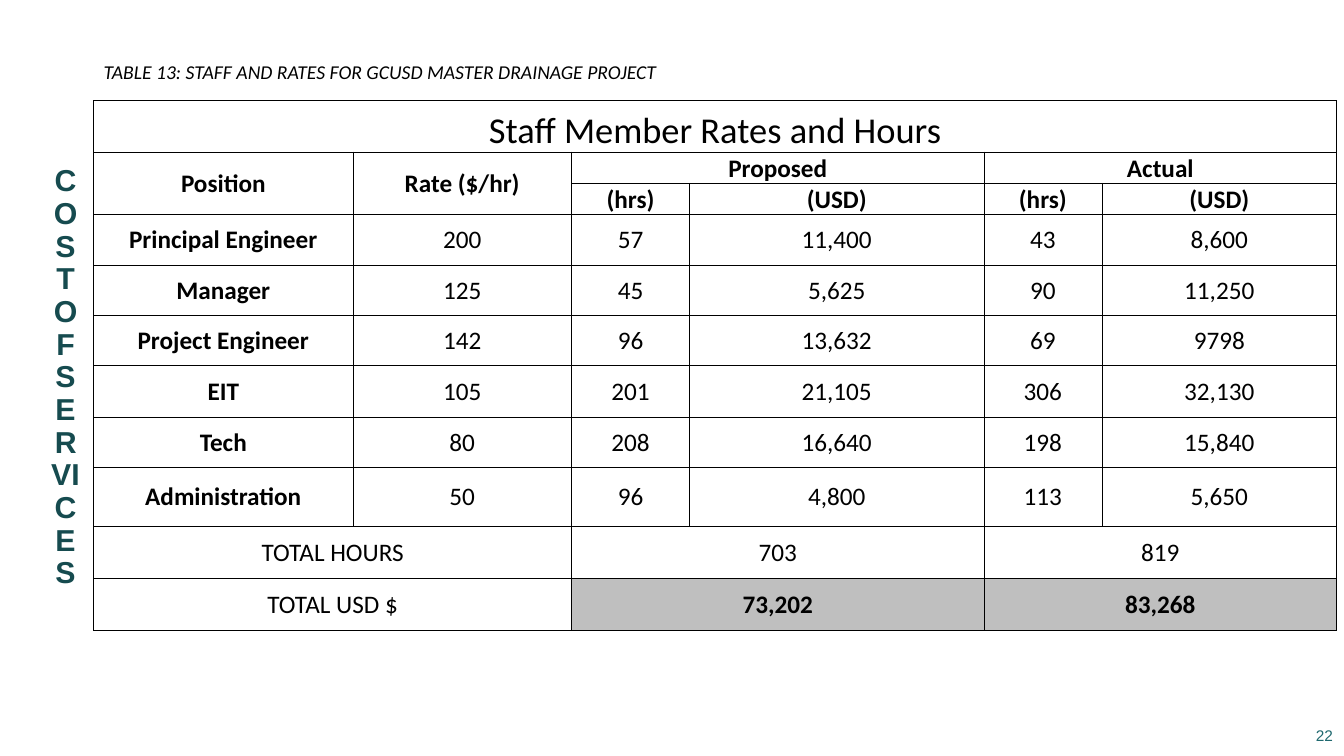
from dataclasses import dataclass

from lxml import etree
from pptx import Presentation
from pptx.dml.color import RGBColor
from pptx.enum.text import MSO_ANCHOR, MSO_AUTO_SIZE, PP_ALIGN
from pptx.oxml.ns import qn
from pptx.util import Inches, Pt

LEFT, CENTER, RIGHT = PP_ALIGN.LEFT, PP_ALIGN.CENTER, PP_ALIGN.RIGHT
TOP, MIDDLE, BOTTOM = MSO_ANCHOR.TOP, MSO_ANCHOR.MIDDLE, MSO_ANCHOR.BOTTOM
NO_AUTOFIT = MSO_AUTO_SIZE.NONE
TITLE_ONLY = 5


@dataclass(frozen=True)
class TextStyle:
    size: float
    color: str = "000000"
    font: str = "Calibri"
    bold: bool = False
    italic: bool = False
    align: PP_ALIGN = CENTER
    line_spacing: float = 1.0


@dataclass(frozen=True)
class Theme:
    title: TextStyle = TextStyle(21.6, "164B4F", "Arial", bold=True, line_spacing=0.9)
    page_number: TextStyle = TextStyle(11, "1F696F", "Arial", align=RIGHT)
    caption: TextStyle = TextStyle(14, italic=True, align=LEFT)
    heading: TextStyle = TextStyle(26, line_spacing=1.15)
    label: TextStyle = TextStyle(18, bold=True)
    value: TextStyle = TextStyle(18)
    highlight: str = "BFBFBF"
    border: str = "000000"
    border_points: float = 0.5


@dataclass(frozen=True)
class Box:
    left: float
    top: float
    width: float
    height: float

    def lengths(self) -> tuple:
        return tuple(Inches(n) for n in (self.left, self.top, self.width, self.height))


@dataclass(frozen=True)
class TableCell:
    row: int
    column: int
    text: str
    style: TextStyle
    rows: int = 1
    columns: int = 1
    fill: str = ""


THEME = Theme()
TITLE_BOX = Box(0.4, 0, 0.5, 7.5)
PAGE_NUMBER_BOX = Box(12.82, 7.1, 0.5, 0.4)
CAPTION_BOX = Box(0.93, 0.55, 9.59, 0.34)
TABLE_BOX = Box(0.93, 1, 12.32, 5.25)
COLUMN_WIDTHS = (2.57, 2.17, 1.17, 2.92, 1.17, 2.33)
ROW_HEIGHTS = (0.33, 0.24, 0.25, 0.5, 0.5, 0.5, 0.51, 0.5, 0.58, 0.52, 0.52)
FIRST_STAFF_ROW = 3
STAFF = (
    ("Principal Engineer", "200", "57", "11,400", "43", "8,600"),
    ("Manager", "125", "45", "5,625", "90", "11,250"),
    ("Project Engineer", "142", "96", "13,632", "69", "9798"),
    ("EIT", "105", "201", "21,105", "306", "32,130"),
    ("Tech", "80", "208", "16,640", "198", "15,840"),
    ("Administration", "50", "96", "4,800", "113", "5,650"),
)
TOTALS = (
    (("TOTAL HOURS", "703", "819"), THEME.value, ""),
    (("TOTAL USD $", "73,202", "83,268"), THEME.label, THEME.highlight),
)


def write_text(text_frame, text: str, style: TextStyle) -> None:
    paragraph = text_frame.paragraphs[0]
    paragraph.text = text
    paragraph.alignment = style.align
    paragraph.line_spacing = style.line_spacing
    font = paragraph.font
    font.name = style.font
    font.size = Pt(style.size)
    font.bold = style.bold
    font.italic = style.italic
    font.color.rgb = RGBColor.from_string(style.color)


def place_title(slide, text: str) -> None:
    title = slide.shapes.title
    title.left, title.top, title.width, title.height = TITLE_BOX.lengths()
    text_frame = title.text_frame
    text_frame.auto_size = NO_AUTOFIT
    text_frame.word_wrap = True
    text_frame.vertical_anchor = BOTTOM
    title.element.txBody.find(qn("a:bodyPr")).set("vert", "wordArtVert")
    write_text(text_frame, text, THEME.title)


def add_text(slide, box: Box, text: str, style: TextStyle, anchor: MSO_ANCHOR) -> None:
    text_frame = slide.shapes.add_textbox(*box.lengths()).text_frame
    text_frame.word_wrap = True
    text_frame.vertical_anchor = anchor
    write_text(text_frame, text, style)


def add_borders(cell) -> None:
    properties = cell._tc.get_or_add_tcPr()
    for index, side in enumerate(("a:lnL", "a:lnR", "a:lnT", "a:lnB")):
        line = etree.Element(qn(side), w=str(Pt(THEME.border_points)))
        fill = etree.SubElement(line, qn("a:solidFill"))
        etree.SubElement(fill, qn("a:srgbClr"), val=THEME.border)
        properties.insert(index, line)


def table_cells() -> list[TableCell]:
    label = THEME.label
    cells = [
        TableCell(0, 0, "Staff Member Rates and Hours", THEME.heading, columns=6),
        TableCell(1, 0, "Position", label, rows=2),
        TableCell(1, 1, "Rate ($/hr)", label, rows=2),
    ]
    for column, group in ((2, "Proposed"), (4, "Actual")):
        cells += [
            TableCell(1, column, group, label, columns=2),
            TableCell(2, column, "(hrs)", label),
            TableCell(2, column + 1, "(USD)", label),
        ]
    for row, member in enumerate(STAFF, FIRST_STAFF_ROW):
        for column, text in enumerate(member):
            cells.append(TableCell(row, column, text, THEME.value if column else label))
    for row, (texts, style, fill) in enumerate(TOTALS, FIRST_STAFF_ROW + len(STAFF)):
        for index, text in enumerate(texts):
            cells.append(TableCell(row, 2 * index, text, style if index else THEME.value,
                                   columns=2, fill=fill if index else ""))
    return cells


def add_rates_table(slide) -> None:
    table = slide.shapes.add_table(
        len(ROW_HEIGHTS), len(COLUMN_WIDTHS), *TABLE_BOX.lengths()).table
    table.first_row = False
    table.horz_banding = False
    for column, width in zip(table.columns, COLUMN_WIDTHS):
        column.width = Inches(width)
    for row, height in zip(table.rows, ROW_HEIGHTS):
        row.height = Inches(height)
    for cell in table.iter_cells():
        cell.margin_left = cell.margin_right = cell.margin_top = Inches(0.01)
        cell.margin_bottom = 0
        cell.vertical_anchor = MIDDLE
        cell.fill.background()
        add_borders(cell)
        write_text(cell.text_frame, "", THEME.value)
    for item in table_cells():
        cell = table.cell(item.row, item.column)
        if item.rows > 1 or item.columns > 1:
            cell.merge(table.cell(item.row + item.rows - 1, item.column + item.columns - 1))
        if item.fill:
            cell.fill.solid()
            cell.fill.fore_color.rgb = RGBColor.from_string(item.fill)
        write_text(cell.text_frame, item.text, item.style)


def main() -> None:
    presentation = Presentation()
    presentation.slide_width = Inches(13.33)
    presentation.slide_height = Inches(7.5)
    slide = presentation.slides.add_slide(presentation.slide_layouts[TITLE_ONLY])
    place_title(slide, "COST OF SERVICES")
    add_text(slide, PAGE_NUMBER_BOX, "22", THEME.page_number, MIDDLE)
    add_text(slide, CAPTION_BOX, "TABLE 13: STAFF AND RATES FOR GCUSD MASTER DRAINAGE PROJECT",
             THEME.caption, TOP)
    add_rates_table(slide)
    presentation.save("out.pptx")


if __name__ == "__main__":
    main()
